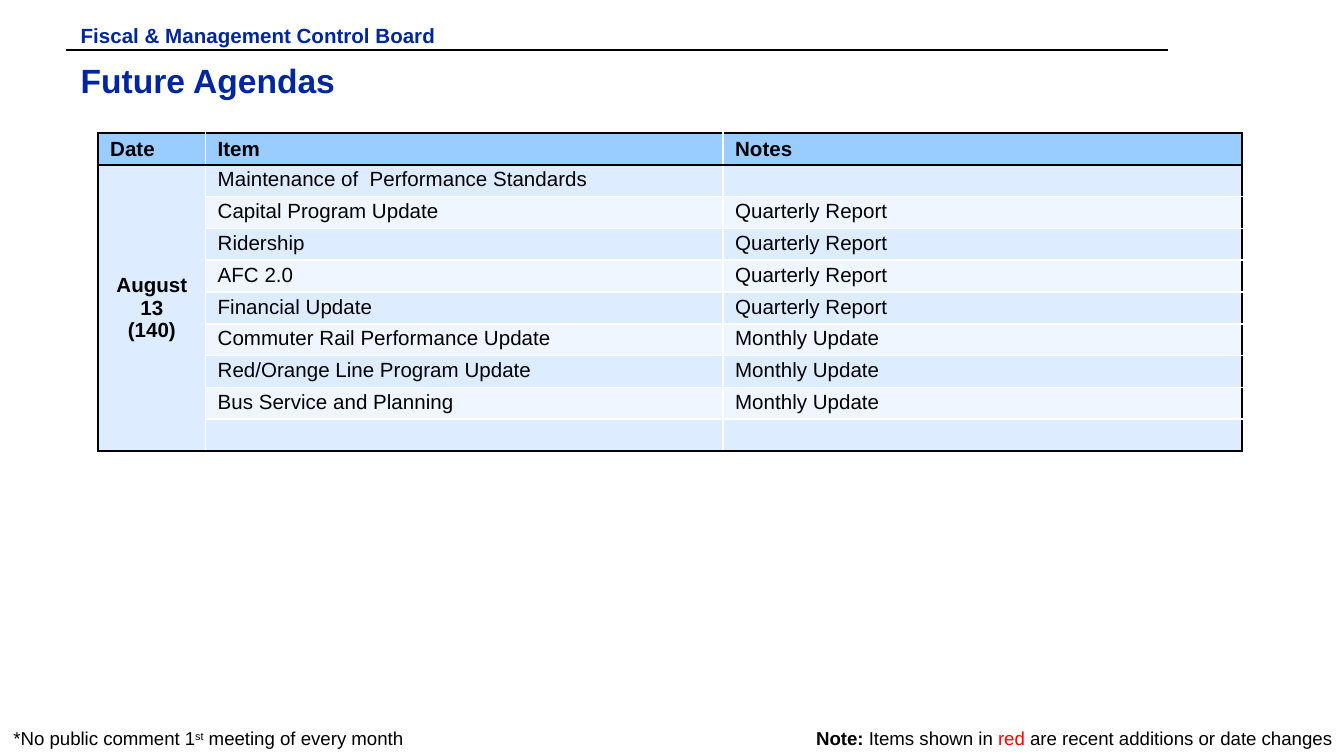
from lxml.etree import SubElement
from pptx import Presentation
from pptx.dml.color import RGBColor
from pptx.enum.shapes import MSO_CONNECTOR as Connector
from pptx.enum.text import MSO_ANCHOR as Anchor
from pptx.enum.text import MSO_AUTO_SIZE as AutoSize
from pptx.enum.text import PP_ALIGN as Align
from pptx.oxml.ns import qn
from pptx.util import Inches, Pt

FONT = "Arial"
BLACK, WHITE, NAVY, RED = "000000", "FFFFFF", "00269E", "FF0000"
HEADER_FILL, DARK_BAND, LIGHT_BAND = "99CCFF", "DEECFF", "EFF6FF"

HEADINGS = ["Date", "Item", "Notes"]
MEETING = ["August 13", "(140)"]
AGENDA = [
    ("Maintenance of  Performance Standards", ""),
    ("Capital Program Update", "Quarterly Report"),
    ("Ridership", "Quarterly Report"),
    ("AFC 2.0", "Quarterly Report"),
    ("Financial Update", "Quarterly Report"),
    ("Commuter Rail Performance Update", "Monthly Update"),
    ("Red/Orange Line Program Update", "Monthly Update"),
    ("Bus Service and Planning", "Monthly Update"),
    ("", ""),
]
COLUMN_WIDTHS = [0.8, 3.85, 3.86]
TABLE_HEIGHT = 2.36


def rgb(color):
    return RGBColor.from_string(color)


def set_values(target, values):
    for name, value in values.items():
        setattr(target, name, value)


def add_span(para, text, size, color=BLACK, bold=False, baseline=0):
    """Add a run; baseline is a percentage that raises the text."""
    span = para.add_run()
    span.text = text
    set_values(span.font, {"name": FONT, "size": Pt(size), "bold": bold})
    span.font.color.rgb = rgb(color)
    if baseline:
        span._r.get_or_add_rPr().set("baseline", str(baseline * 1000))


def set_hanging(para, indent):
    """Give a paragraph a hanging indent and no bullet."""
    properties = para._p.get_or_add_pPr()
    properties.set("marL", str(Inches(indent)))
    properties.set("indent", str(-Inches(indent)))
    SubElement(properties, qn("a:buNone"))


def format_frame(frame, **values):
    margins = {
        "margin_left": Inches(0.09),
        "margin_right": Inches(0.09),
        "margin_top": Inches(0.04),
        "margin_bottom": Inches(0.04),
        "word_wrap": True,
    }
    set_values(frame, margins | values)


def place(shape, left, top, width, height):
    set_values(shape, {
        "left": Inches(left), "top": Inches(top),
        "width": Inches(width), "height": Inches(height),
    })


def fill_heading(holder, position, text, size, **frame_values):
    place(holder, *position)
    frame = holder.text_frame
    format_frame(frame, auto_size=AutoSize.NONE, **frame_values)
    para = frame.paragraphs[0]
    para.alignment = Align.LEFT
    para.space_before = Pt(0)
    add_span(para, text, size, NAVY, True)
    return para


def add_footnote(slide, position, spans, align=Align.LEFT, wrap=True):
    box = slide.shapes.add_textbox(*map(Inches, position))
    format_frame(box.text_frame, word_wrap=wrap, auto_size=AutoSize.SHAPE_TO_FIT_TEXT)
    para = box.text_frame.paragraphs[0]
    para.alignment = align
    for text, values in spans:
        add_span(para, text, 10, **values)
    return para


def add_rule(slide, left, right, top):
    rule = slide.shapes.add_connector(
        Connector.STRAIGHT, Inches(left), Inches(top), Inches(right), Inches(top))
    rule.line.color.rgb = rgb(BLACK)
    rule.line.width = Pt(1)
    SubElement(rule._element.spPr, qn("a:effectLst"))


def set_borders(cell, colors):
    """Draw 1 pt borders; colors maps L, R, T and B, in that order."""
    properties = cell._tc.get_or_add_tcPr()
    for side, color in colors.items():
        line = SubElement(properties, qn(f"a:ln{side}"), w=str(Pt(1)))
        SubElement(SubElement(line, qn("a:solidFill")), qn("a:srgbClr"), val=color)


def fill_cell(cell, lines, fill, bold=False, anchor=Anchor.TOP, align=Align.LEFT):
    set_values(cell, {
        "margin_left": Inches(0.09), "margin_right": Inches(0.09),
        "margin_top": Pt(1.9), "margin_bottom": Pt(1.9),
        "vertical_anchor": anchor,
    })
    cell.fill.solid()
    cell.fill.fore_color.rgb = rgb(fill)
    frame = cell.text_frame
    for index, text in enumerate(lines):
        para = frame.add_paragraph() if index else frame.paragraphs[0]
        para.alignment = align
        if text:
            add_span(para, text, 11, bold=bold)
        else:
            SubElement(para._p, qn("a:endParaRPr"), sz="1100")


def add_agenda_table(slide, left, top):
    row_count = len(AGENDA) + 1
    table = slide.shapes.add_table(
        row_count, len(HEADINGS), Inches(left), Inches(top),
        Inches(sum(COLUMN_WIDTHS)), Inches(TABLE_HEIGHT)).table
    set_values(table, {"first_row": False, "horz_banding": False})
    for column, width in zip(table.columns, COLUMN_WIDTHS):
        column.width = Inches(width)
    for row in table.rows:
        row.height = Inches(TABLE_HEIGHT / row_count)
    table.cell(1, 0).merge(table.cell(row_count - 1, 0))

    for row in range(row_count):
        for column in range(len(HEADINGS)):
            cell = table.cell(row, column)
            if cell.is_spanned:
                continue
            outer = {
                "L": column == 0,
                "R": column == len(HEADINGS) - 1,
                "T": row <= 1,
                "B": row in (0, row_count - 1) or column == 0,
            }
            set_borders(cell, {side: BLACK if edge else WHITE
                               for side, edge in outer.items()})
            if row == 0:
                fill_cell(cell, [HEADINGS[column]], HEADER_FILL, True, Anchor.MIDDLE)
            elif column == 0:
                fill_cell(cell, MEETING, DARK_BAND, True, Anchor.MIDDLE, Align.CENTER)
            else:
                band = DARK_BAND if row % 2 else LIGHT_BAND
                fill_cell(cell, [AGENDA[row - 1][column - 1]], band)


def main():
    deck = Presentation()
    deck.slide_width = Inches(10)
    deck.slide_height = Inches(10 * 9 / 16)
    slide = deck.slides.add_slide(deck.slide_layouts[1])

    add_rule(slide, 0.49, 8.69, 0.37)
    add_footnote(slide, (0.01, 5.37, 4.16, 0.26), [
        ("*No public comment 1", {}),
        ("st", {"baseline": 30}),
        (" meeting of every month", {}),
    ])
    note = add_footnote(slide, (5.8, 5.37, 4.2, 0.26), [
        ("Note: ", {"bold": True}),
        ("Items shown in ", {}),
        ("red", {"color": RED}),
        (" are recent additions or date changes", {}),
    ], Align.RIGHT, False)
    set_hanging(note, 0.34)

    title = fill_heading(slide.shapes.title, (0.51, 0.4, 8.36, 0.48),
                         "Future Agendas", 18, vertical_anchor=Anchor.MIDDLE,
                         margin_bottom=Inches(0.07))
    title.line_spacing = 0.8
    board = fill_heading(slide.placeholders[1], (0.51, 0.12, 3.41, 0.19),
                         "Fiscal & Management Control Board", 11,
                         vertical_anchor=Anchor.TOP, margin_top=Inches(0.05))
    set_hanging(board, 0.22)
    add_agenda_table(slide, 0.73, 0.99)
    deck.save("out.pptx")


if __name__ == "__main__":
    main()
